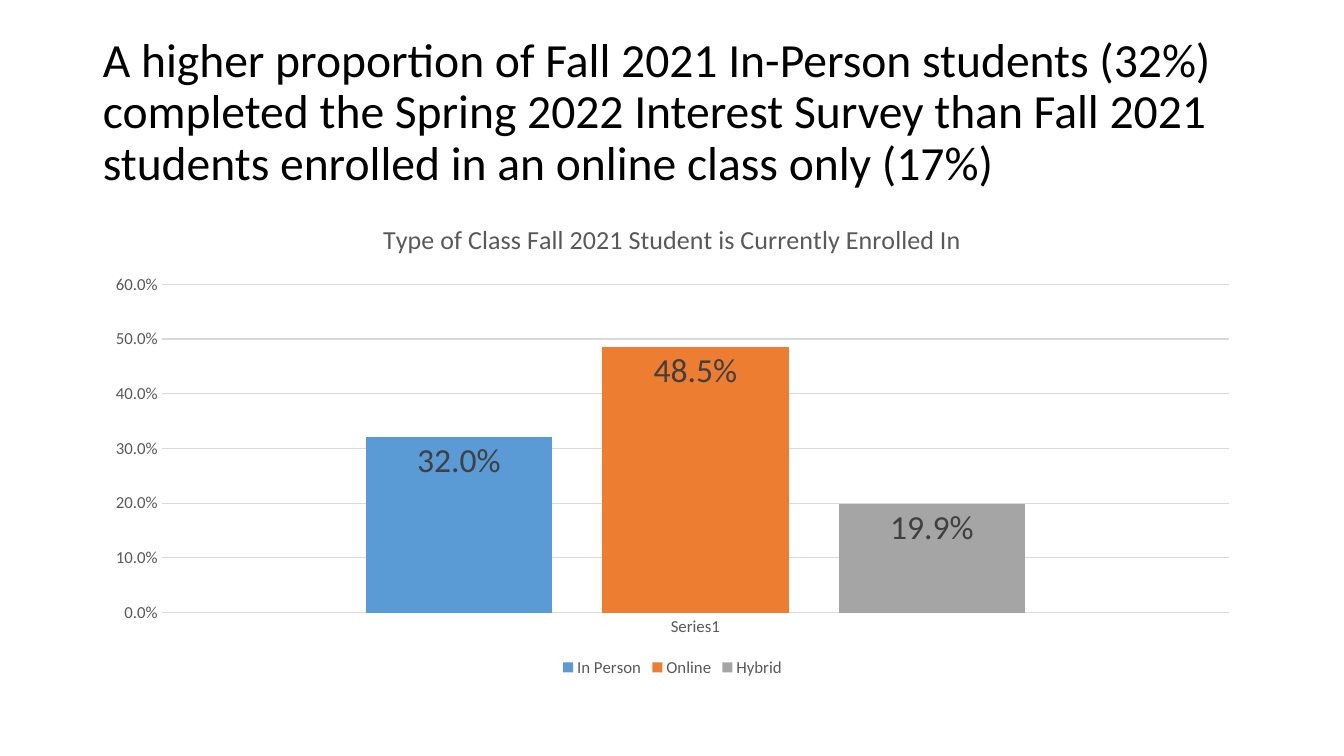
import pptx
import pptx.chart.data
import pptx.dml.color
import pptx.enum.chart
import pptx.enum.text
import pptx.util

COLORS = {
    "title": "000000",
    "chart text": "595959",
    "label": "404040",
    "rule": "D9D9D9",
    "In Person": "5B9BD5",
    "Online": "ED7D31",
    "Hybrid": "A5A5A5",
}
SHARES = {"In Person": 0.32, "Online": 0.485, "Hybrid": 0.199}
TITLE = (
    "A higher proportion of Fall 2021 In-Person students (32%) completed "
    "the Spring 2022 Interest Survey than Fall 2021 students enrolled in "
    "an online class only (17%)"
)
CHART_TITLE = "Type of Class Fall 2021 Student is Currently Enrolled In"


class SlideBuilder:
    FONT = "Calibri"
    WIDTH, HEIGHT = 13.33, 7.5
    LEFT, SPAN = 0.92 / WIDTH, 11.5 / WIDTH

    def __init__(self, presentation):
        presentation.slide_width = pptx.util.Inches(self.WIDTH)
        presentation.slide_height = pptx.util.Inches(self.HEIGHT)
        self.slide = presentation.slides.add_slide(presentation.slide_layouts[5])

    def box(self, top, height):
        """Return left, top, width and height of a full-span band, from shares of the slide height."""
        return (
            pptx.util.Inches(self.LEFT * self.WIDTH),
            pptx.util.Inches(top * self.HEIGHT),
            pptx.util.Inches(self.SPAN * self.WIDTH),
            pptx.util.Inches(height * self.HEIGHT),
        )

    def color(self, name):
        return pptx.dml.color.RGBColor.from_string(COLORS[name])

    def style_font(self, font, size, color):
        font.name = self.FONT
        font.size = pptx.util.Pt(size)
        font.bold = False
        font.color.rgb = self.color(color)

    def style_line(self, line):
        line.color.rgb = self.color("rule")
        line.width = pptx.util.Pt(0.75)

    def add_title(self, text, top, height):
        title = self.slide.shapes.title
        title.left, title.top, title.width, title.height = self.box(top, height)
        frame = title.text_frame
        frame.word_wrap = True
        frame.auto_size = pptx.enum.text.MSO_AUTO_SIZE.NONE
        frame.vertical_anchor = pptx.enum.text.MSO_ANCHOR.MIDDLE
        paragraph = frame.paragraphs[0]
        paragraph.alignment = pptx.enum.text.PP_ALIGN.LEFT
        paragraph.line_spacing = 0.9
        run = paragraph.add_run()
        run.text = text
        self.style_font(run.font, 34, "title")

    def add_column_chart(self, heading, category, shares, top, height):
        data = pptx.chart.data.CategoryChartData(number_format="0.0%")
        data.categories = [category]
        for name, share in shares.items():
            data.add_series(name, [share])
        kind = pptx.enum.chart.XL_CHART_TYPE.COLUMN_CLUSTERED
        chart = self.slide.shapes.add_chart(kind, *self.box(top, height), data).chart
        self.style_font(chart.font, 12, "chart text")

        chart.has_title = True
        run = chart.chart_title.text_frame.paragraphs[0].add_run()
        run.text = heading
        self.style_font(run.font, 18.6, "chart text")
        chart.chart_title.include_in_layout = False

        chart.has_legend = True
        chart.legend.position = pptx.enum.chart.XL_LEGEND_POSITION.BOTTOM
        chart.legend.include_in_layout = False
        self.style_font(chart.legend.font, 12, "chart text")

        self.style_axes(chart)
        self.style_columns(chart.plots[0])

    def style_axes(self, chart):
        for axis in (chart.category_axis, chart.value_axis):
            axis.major_tick_mark = pptx.enum.chart.XL_TICK_MARK.NONE
            axis.minor_tick_mark = pptx.enum.chart.XL_TICK_MARK.NONE
            self.style_font(axis.tick_labels.font, 12, "chart text")
        self.style_line(chart.category_axis.format.line)

        values = chart.value_axis
        values.minimum_scale, values.maximum_scale, values.major_unit = 0, 0.6, 0.1
        values.tick_labels.number_format = "0.0%"
        values.tick_labels.number_format_is_linked = False
        values.format.line.fill.background()
        self.style_line(values.major_gridlines.format.line)

    def style_columns(self, plot):
        plot.gap_width = 219
        plot.overlap = -27
        plot.vary_by_categories = False
        for series in plot.series:
            series.format.fill.solid()
            series.format.fill.fore_color.rgb = self.color(series.name)
            labels = series.data_labels
            labels.show_value = True
            labels.number_format = "0.0%"
            labels.number_format_is_linked = False
            labels.position = pptx.enum.chart.XL_LABEL_POSITION.INSIDE_END
            self.style_font(labels.font, 24, "label")


def main():
    presentation = pptx.Presentation()
    builder = SlideBuilder(presentation)
    builder.add_title(TITLE, 0.4 / builder.HEIGHT, 1.45 / builder.HEIGHT)
    builder.add_column_chart(
        CHART_TITLE, "Series1", SHARES, 2 / builder.HEIGHT, 4.76 / builder.HEIGHT
    )
    presentation.save("out.pptx")


if __name__ == "__main__":
    main()
